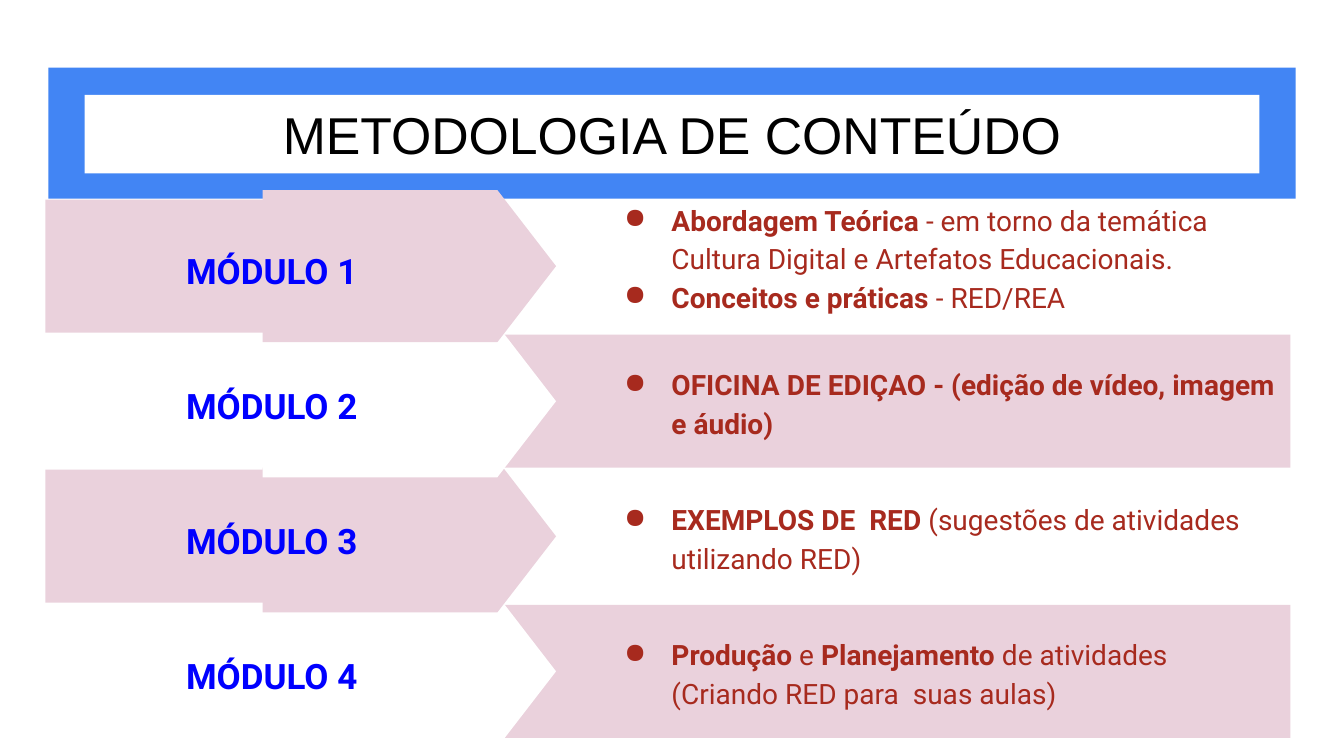
from lxml.etree import SubElement
from pptx import Presentation
from pptx.dml.color import RGBColor
from pptx.enum.shapes import MSO_SHAPE as Preset
from pptx.enum.text import MSO_ANCHOR as Anchor, MSO_AUTO_SIZE as AutoSize, PP_ALIGN as Align
from pptx.oxml.ns import qn
from pptx.util import Inches, Pt

BLUE = RGBColor(0x42, 0x85, 0xF4)
WHITE = RGBColor(0xFF, 0xFF, 0xFF)
BLACK = RGBColor(0x00, 0x00, 0x00)
PINK = RGBColor(0xEA, 0xD1, 0xDC)
LABEL_BLUE = RGBColor(0x00, 0x00, 0xFF)
BRICK = RGBColor(0xA7, 0x2A, 0x1E)

ROW_LEFT, ROW_TOP, ROW_STEP = 0.45, 1.98, 1.34
ROW_WIDTH, ROW_HEIGHT = 12.35, 1.32

# Each module is a list of bullets; each bullet is a list of (text, bold) runs.
MODULES = [
    [
        [("Abordagem Teórica", True),
         (" - em torno da temática Cultura Digital e Artefatos Educacionais.", False)],
        [("Conceitos e práticas", True), (" - RED/REA", False)],
    ],
    [[("OFICINA DE EDIÇAO - (edição de vídeo, imagem e áudio)", True)]],
    [[("EXEMPLOS DE  RED ", True), ("(sugestões de atividades utilizando RED)", False)]],
    [[("Produção", True), (" e ", False), ("Planejamento", True),
      (" de atividades (Criando RED para  suas aulas)", False)]],
]


def add_block(shapes, preset, left, top, width, height, color):
    block = shapes.add_shape(preset, Inches(left), Inches(top), Inches(width), Inches(height))
    block.shadow.inherit = False
    block.fill.solid()
    block.fill.fore_color.rgb = color
    block.line.fill.background()
    return block


def add_text_frame(shapes, left, top, width, height):
    box = shapes.add_textbox(Inches(left), Inches(top), Inches(width), Inches(height))
    frame = box.text_frame
    frame.word_wrap = True
    frame.auto_size = AutoSize.NONE
    frame.vertical_anchor = Anchor.MIDDLE
    frame.margin_left = frame.margin_right = Inches(0.13)
    frame.margin_top = frame.margin_bottom = Inches(0.13)
    return frame


def format_paragraph(paragraph, size, color):
    paragraph.line_spacing = 1.15
    paragraph.font.name = "Roboto"
    paragraph.font.size = Pt(size)
    paragraph.font.color.rgb = color


def add_bullet(paragraph):
    properties = paragraph._p.get_or_add_pPr()
    properties.set("marL", str(Inches(0.67)))
    properties.set("indent", str(Inches(-0.47)))
    bullet_color = SubElement(properties, qn("a:buClr"))
    SubElement(bullet_color, qn("a:srgbClr"), val=str(BRICK))
    SubElement(properties, qn("a:buChar"), char="●")
    # Default run properties must follow the bullet in the schema order.
    properties.append(properties.find(qn("a:defRPr")))


def add_title(slide, left, top, width, height):
    """Place the white title inside a blue frame."""
    frame = add_block(slide.shapes, Preset.RECTANGLE, left, top, width, height, BLUE)
    title = slide.shapes.title
    title.element.addprevious(frame.element)
    title.left, title.top = Inches(left + 0.36), Inches(top + 0.27)
    title.width, title.height = Inches(width - 0.72), Inches(height - 0.52)
    title.fill.solid()
    title.fill.fore_color.rgb = WHITE
    title.text_frame.text = "METODOLOGIA DE CONTEÚDO"
    title.text_frame.auto_size = AutoSize.NONE
    title.text_frame.vertical_anchor = Anchor.MIDDLE
    paragraph = title.text_frame.paragraphs[0]
    paragraph.alignment = Align.CENTER
    paragraph.font.name = "Arial"
    paragraph.font.size = Pt(37)
    paragraph.font.color.rgb = BLACK


def add_arrow(shapes, center_x, center_y, length, thickness, color):
    """Turn the downward off-page connector so that it points right."""
    arrow = add_block(shapes, Preset.FLOWCHART_OFFPAGE_CONNECTOR, center_x - thickness / 2,
                      center_y - length / 2, thickness, length, color)
    arrow.rotation = 270


def add_module(slide, number, bullets, left, top, width, height):
    shapes = slide.shapes.add_group_shape().shapes
    label_color, list_color = (PINK, WHITE) if number % 2 else (WHITE, PINK)
    add_block(shapes, Preset.RECTANGLE, left + 3.39, top, width - 3.39, height, list_color)
    add_block(shapes, Preset.RECTANGLE, left, top, 4.33, height, label_color)
    add_arrow(shapes, left + 3.61, top + height / 2, 2.91, 1.51, label_color)

    label = add_text_frame(shapes, left - 0.03, top + 0.16, 4.55, 1.02).paragraphs[0]
    label.text = f"MÓDULO {number}"
    label.alignment = Align.CENTER
    format_paragraph(label, 25, LABEL_BLUE)
    label.font.bold = True

    frame = add_text_frame(shapes, left + 5.41, top, width - 5.38, height)
    if len(bullets) > 1:
        frame.margin_bottom = Inches(0.33)
    for index, runs in enumerate(bullets):
        paragraph = frame.add_paragraph() if index else frame.paragraphs[0]
        format_paragraph(paragraph, 20, BRICK)
        add_bullet(paragraph)
        for text, bold in runs:
            run = paragraph.add_run()
            run.text = text
            run.font.bold = bold


def main():
    presentation = Presentation()
    presentation.slide_width = Inches(13.33)
    presentation.slide_height = Inches(7.5)
    slide = presentation.slides.add_slide(presentation.slide_layouts[5])
    add_title(slide, 0.48, 0.67, 12.37, 1.3)
    # Upper rows overlap the lower ones, so the last row goes in first.
    for index, bullets in reversed(list(enumerate(MODULES))):
        add_module(slide, index + 1, bullets, ROW_LEFT, ROW_TOP + index * ROW_STEP,
                   ROW_WIDTH, ROW_HEIGHT)
    presentation.save("out.pptx")


if __name__ == "__main__":
    main()
